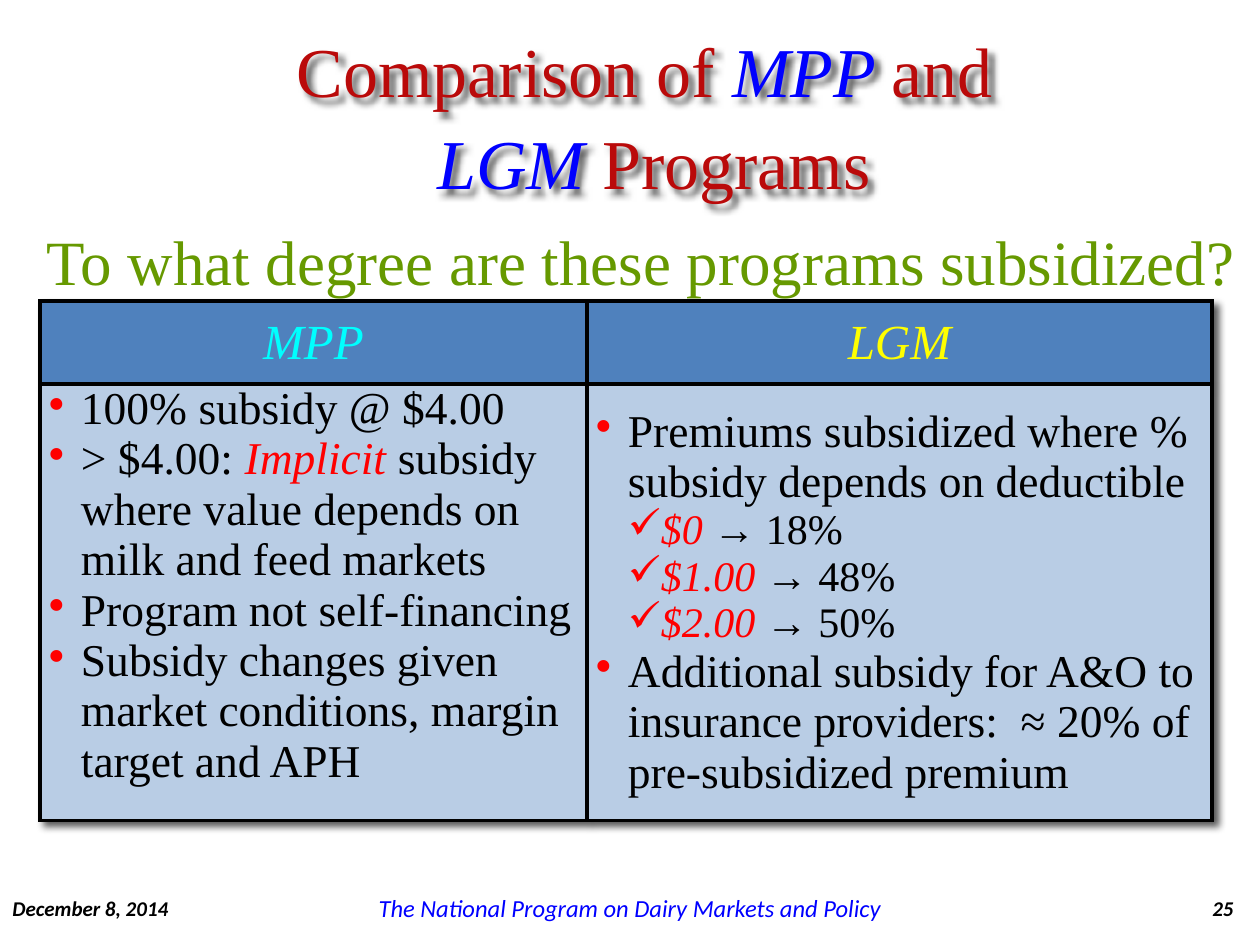
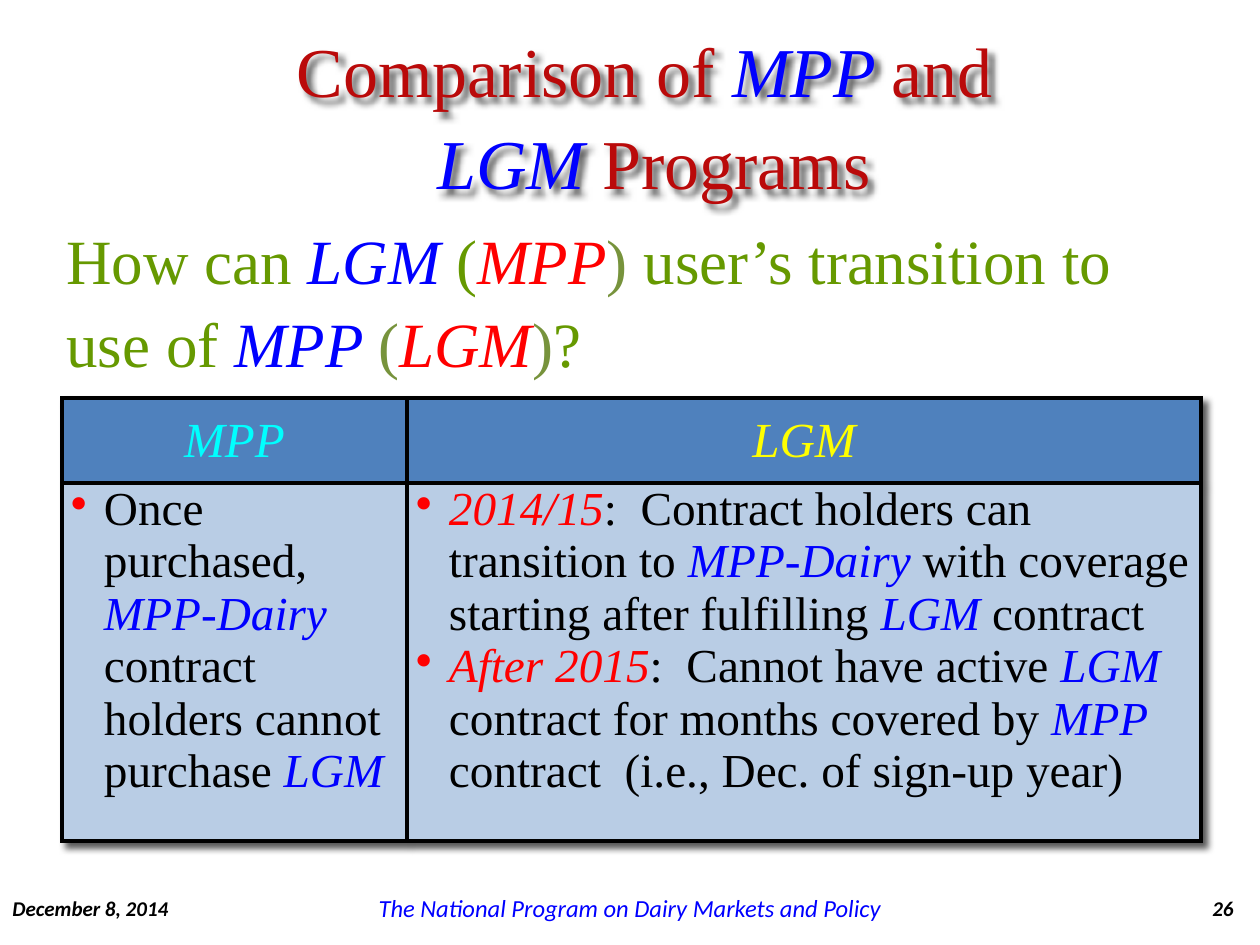
import pptx
import pptx.dml.color
import pptx.enum.text
import pptx.oxml
import pptx.oxml.ns
import pptx.util

RGBColor = pptx.dml.color.RGBColor
ALIGN = pptx.enum.text.PP_ALIGN
ANCHOR = pptx.enum.text.MSO_ANCHOR

PX = 914400 / 126
SERIF, SANS = "Times New Roman", "Calibri"
BLACK = RGBColor(0x00, 0x00, 0x00)
BLUE = RGBColor(0x00, 0x00, 0xFF)
RED = RGBColor(0xFF, 0x00, 0x00)
CYAN = RGBColor(0x00, 0xFF, 0xFF)
YELLOW = RGBColor(0xFF, 0xFF, 0x00)
CRIMSON = RGBColor(0xBA, 0x0A, 0x0A)
GREEN = RGBColor(0x66, 0x99, 0x00)
OLIVE = RGBColor(0x77, 0x93, 0x3C)
HEADER_FILL = RGBColor(0x4F, 0x81, 0xBD)
BODY_FILL = RGBColor(0xB9, 0xCD, 0xE5)
LINE_SPACING = 1.09

SUBSIDY_MPP = [
    ("•", ["100% subsidy @ $4.00"]),
    ("•", ["> $4.00: ", ("Implicit", RED),
           " subsidy where value depends on milk and feed markets"]),
    ("•", ["Program not self-financing"]),
    ("•", ["Subsidy changes given market conditions, margin target and APH"]),
]
SUBSIDY_LGM = [
    ("•", ["Premiums subsidized where % subsidy depends on deductible"]),
    ("✓", [("$0 ", RED), "→ 18%"]),
    ("✓", [("$1.00 ", RED), "→ 48%"]),
    ("✓", [("$2.00 ", RED), "→ 50%"]),
    ("•", ["Additional subsidy for A&O to insurance providers:  ≈ 20% of "
           "pre-subsidized premium"]),
]
TRANSITION_MPP = [
    ("•", ["Once purchased, ", ("MPP-Dairy", BLUE),
           " contract holders cannot purchase ", ("LGM", BLUE)]),
]
TRANSITION_LGM = [
    ("•", [("2014/15", RED), ":  Contract holders can transition to ",
           ("MPP-Dairy", BLUE), " with coverage starting after fulfilling ",
           ("LGM", BLUE), " contract"]),
    ("•", [("After 2015", RED), ":  Cannot have active ", ("LGM", BLUE),
           " contract for months covered by ", ("MPP", BLUE),
           " contract  (i.e., Dec. of sign-up year)"]),
]
TRANSITION_QUESTION = [
    "How can ", ("LGM", BLUE), " (", ("MPP", RED), (") ", OLIVE, False),
    "user’s transition to use of ", ("MPP ", BLUE), ("(", OLIVE, False),
    ("LGM", RED), (")", OLIVE, False), "?",
]


def px(n):
    """Turn pixels into EMU."""
    return pptx.util.Emu(round(n * PX))


def add_xml(parent, xml, index=None):
    """Add a drawing element to parent, at the end or at index."""
    head, tail = xml.split(">", 1) if not xml.endswith("/>") else (xml[:-2], None)
    head += " " + pptx.oxml.ns.nsdecls("a")
    element = pptx.oxml.parse_xml(head + ("/>" if tail is None else ">" + tail))
    parent.insert(len(parent) if index is None else index, element)


def add_shadow(parent, index=None):
    """Give a shape or a table a soft shadow to the lower right."""
    add_xml(parent, '<a:effectLst><a:outerShdw blurRad="50800" dist="50800" '
            'dir="2700000" algn="tl"><a:srgbClr val="000000">'
            '<a:alpha val="65000"/></a:srgbClr></a:outerShdw></a:effectLst>', index)


def add_runs(p, runs, size, color, font=SERIF, bold=False, italic=False):
    """Add plain strings, or (text, colour, italic) runs, to a paragraph."""
    for run in runs:
        if isinstance(run, str):
            run = (run, color, italic)
        text, run_color, *slant = run
        r = p.add_run()
        r.text = text
        r.font.name, r.font.size = font, pptx.util.Pt(size)
        r.font.bold, r.font.italic = bold, slant[0] if slant else True
        r.font.color.rgb = run_color


def add_title(s):
    """Fill the title with its two centred lines."""
    sp = s.shapes.title
    sp.left, sp.top, sp.width, sp.height = px(135), px(33), px(1020), px(158)
    add_shadow(sp._element.spPr)
    tf = sp.text_frame
    tf.auto_size = pptx.enum.text.MSO_AUTO_SIZE.NONE
    tf.vertical_anchor = ANCHOR.MIDDLE
    lines = (["Comparison of ", ("MPP ", BLUE), "and"],
             [(" LGM ", BLUE), "Programs"])
    for i, runs in enumerate(lines):
        p = tf.add_paragraph() if i else tf.paragraphs[0]
        p.alignment, p.line_spacing = ALIGN.CENTER, LINE_SPACING
        add_runs(p, runs, 40, CRIMSON)


def add_text(s, box, runs, size, color, align=ALIGN.LEFT, anchor=ANCHOR.MIDDLE,
             wrap=True, spacing=1.0, **style):
    """Add a one-paragraph text box."""
    tf = s.shapes.add_textbox(*map(px, box)).text_frame
    tf.word_wrap, tf.vertical_anchor = wrap, anchor
    p = tf.paragraphs[0]
    p.alignment, p.line_spacing = align, spacing
    add_runs(p, runs, size, color, **style)


def add_question(s, box, runs, wrap=True):
    """Add the green question above the table."""
    add_text(s, box, runs, 36, GREEN, anchor=ANCHOR.TOP, wrap=wrap,
             spacing=LINE_SPACING)


def add_footer(s, number):
    """Add the date, the programme name and the slide number."""
    small = dict(font=SANS, bold=True, italic=True)
    add_text(s, (0, 893, 203, 30), ["December 8, 2014"], 12, BLACK, **small)
    add_text(s, (363, 893, 534, 30),
             ["The National Program on Dairy Markets and Policy"], 14, BLUE,
             ALIGN.CENTER, font=SANS, italic=True)
    add_text(s, (1148, 893, 98, 30), [str(number)], 12, BLACK, ALIGN.RIGHT, **small)


def format_cell(cell, fill, anchor):
    """Set the borders, fill, margins and anchor of a cell."""
    tc_pr = cell._tc.get_or_add_tcPr()
    for side in "LRTB":
        add_xml(tc_pr, f'<a:ln{side} w="28575"><a:solidFill>'
                f'<a:srgbClr val="{BLACK}"/></a:solidFill></a:ln{side}>')
    cell.fill.solid()
    cell.fill.fore_color.rgb = fill
    cell.margin_left = cell.margin_right = px(9)
    cell.margin_top = cell.margin_bottom = 0
    cell.vertical_anchor = anchor


def add_bullets(tf, items, size, indent):
    """Fill a text frame with bullets; ticks sit one level deeper and smaller."""
    for i, (mark, runs) in enumerate(items):
        p = tf.add_paragraph() if i else tf.paragraphs[0]
        tick = mark == "✓"
        p_pr = p._p.get_or_add_pPr()
        p_pr.set("marL", str(px(indent * (2 if tick else 1))))
        p_pr.set("indent", str(px(-indent)))
        add_xml(p_pr, f'<a:buClr><a:srgbClr val="{RED}"/></a:buClr>')
        add_xml(p_pr, f'<a:buChar char="{mark}"/>')
        add_runs(p, runs, size - 2 if tick else size, BLACK)


def add_comparison(s, left, top, widths, heights, columns, size, indent,
                   anchors=(ANCHOR.TOP, ANCHOR.TOP)):
    """Add the table that sets MPP beside LGM."""
    frame = s.shapes.add_table(2, 2, px(left), px(top), px(sum(widths)),
                               px(sum(heights)))
    table = frame.table
    add_shadow(table._tbl.tblPr, 0)
    for row, height in zip(table.rows, heights):
        row.height = px(height)
    headings = (("MPP", CYAN), ("LGM", YELLOW))
    for i, (heading, items) in enumerate(zip(headings, columns)):
        table.columns[i].width = px(widths[i])
        head, body = table.cell(0, i), table.cell(1, i)
        format_cell(head, HEADER_FILL, ANCHOR.MIDDLE)
        format_cell(body, BODY_FILL, anchors[i])
        p = head.text_frame.paragraphs[0]
        p.alignment = ALIGN.CENTER
        add_runs(p, [heading], 28, BLACK)
        add_bullets(body.text_frame, items, size, indent)


def add_slide(prs, number):
    """Add a slide with the shared title and footer."""
    s = prs.slides.add_slide(prs.slide_layouts[5])
    add_title(s)
    add_footer(s, number)
    return s


def main():
    """Build the two comparison slides."""
    prs = pptx.Presentation()
    prs.slide_width, prs.slide_height = px(1260), px(945)

    s = add_slide(prs, 25)
    add_question(s, (34, 210, 1226, 89),
                 ["To what degree are these programs subsidized?"], wrap=False)
    add_comparison(s, 40, 301, (547, 625), (83, 404), (SUBSIDY_MPP, SUBSIDY_LGM),
                   26, 32, (ANCHOR.TOP, ANCHOR.MIDDLE))

    s = add_slide(prs, 26)
    add_question(s, (54, 209, 1109, 165), TRANSITION_QUESTION)
    add_comparison(s, 62, 398, (345, 794), (85, 358),
                   (TRANSITION_MPP, TRANSITION_LGM), 27, 33)

    prs.save("out.pptx")


if __name__ == "__main__":
    main()
